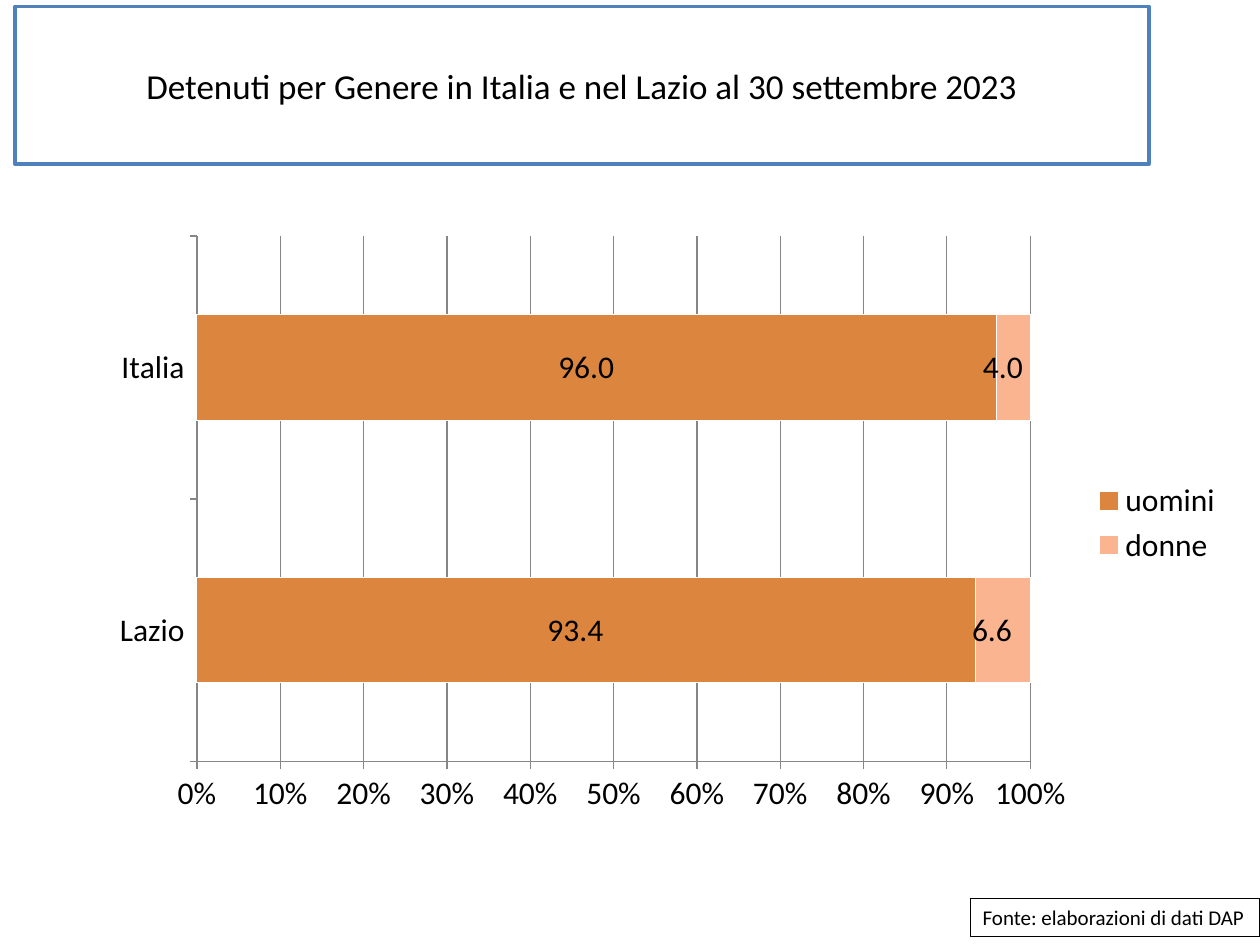
from lxml import etree
from pptx import Presentation
from pptx.chart.data import CategoryChartData
from pptx.dml.color import RGBColor
from pptx.enum import chart as chart_enum, shapes, text
from pptx.oxml import ns
from pptx.util import Cm, Pt

TITLE = "Detenuti per Genere in Italia e nel Lazio al 30 settembre 2023"
SOURCE = "Fonte: elaborazioni di dati DAP"
CATEGORIES = ["Lazio", "Italia"]
BLACK = RGBColor(0x00, 0x00, 0x00)
WHITE = RGBColor(0xFF, 0xFF, 0xFF)
BLUE = RGBColor(0x4F, 0x81, 0xBD)
GRAY = RGBColor(0x86, 0x86, 0x86)
ORANGE = RGBColor(0xDC, 0x85, 0x3E)
PEACH = RGBColor(0xFA, 0xB4, 0x90)
SERIES = [("uomini", [93.4, 96.0], ORANGE), ("donne", [6.6, 4.0], PEACH)]
FONT = "Calibri"
LABEL_FORMAT = r'_-* #,##0.0\ _€_-;\-* #,##0.0\ _€_-;_-* "-"??\ _€_-;_-@_-'
PLOT_AREA = {"x": 0.09, "y": 0.02, "w": 0.73, "h": 0.88}


def format_font(font, size):
    font.name, font.size, font.bold = FONT, Pt(size), False
    font.color.rgb = BLACK


def write_box(shape, content, size, line_color, line_width, align, wrap=True):
    shape.fill.solid()
    shape.fill.fore_color.rgb = WHITE
    shape.line.color.rgb = line_color
    shape.line.width = Pt(line_width)
    frame = shape.text_frame
    frame.word_wrap = wrap
    frame.vertical_anchor = text.MSO_ANCHOR.MIDDLE
    paragraph = frame.paragraphs[0]
    paragraph.alignment = align
    run = paragraph.add_run()
    run.text = content
    format_font(run.font, size)


def set_plot_layout(chart):
    """Fix the inner plot area as fractions of the chart's size."""
    plot_area = chart.plots[0]._element.getparent()
    for old in plot_area.findall(ns.qn("c:layout")):
        plot_area.remove(old)
    layout = etree.Element(ns.qn("c:layout"))
    manual = etree.SubElement(layout, ns.qn("c:manualLayout"))
    settings = {"layoutTarget": "inner", "xMode": "edge", "yMode": "edge", **PLOT_AREA}
    for name, value in settings.items():
        etree.SubElement(manual, ns.qn(f"c:{name}")).set("val", str(value))
    plot_area.insert(0, layout)


def add_gender_chart(slide):
    data = CategoryChartData()
    data.categories = CATEGORIES
    for name, values, _ in SERIES:
        data.add_series(name, values)
    chart = slide.shapes.add_chart(
        chart_enum.XL_CHART_TYPE.BAR_STACKED_100,
        Cm(1.9), Cm(4.52), Cm(23.01), Cm(12.04), data).chart
    format_font(chart.font, 18)
    chart.has_title = False
    chart.has_legend = True
    chart.legend.position = chart_enum.XL_LEGEND_POSITION.RIGHT
    chart.legend.include_in_layout = False

    plot = chart.plots[0]
    plot.gap_width, plot.overlap = 150, 100
    plot.vary_by_categories = False
    for series, (_, _, color) in zip(plot.series, SERIES):
        series.format.fill.solid()
        series.format.fill.fore_color.rgb = color
        series.format.line.color.rgb = WHITE
        labels = series.data_labels
        labels.show_value = True
        labels.number_format = LABEL_FORMAT
        labels.number_format_is_linked = False
        labels.position = chart_enum.XL_LABEL_POSITION.CENTER
        format_font(labels.font, 18)

    value_axis = chart.value_axis
    value_axis.minimum_scale, value_axis.maximum_scale = 0, 1
    value_axis.major_unit = 0.1
    value_axis.has_major_gridlines = True
    value_axis.major_gridlines.format.line.color.rgb = GRAY
    value_axis.tick_labels.number_format = "0%"
    value_axis.tick_labels.number_format_is_linked = False
    for axis in (chart.category_axis, value_axis):
        axis.major_tick_mark = chart_enum.XL_TICK_MARK.OUTSIDE
        axis.format.line.color.rgb = GRAY
    set_plot_layout(chart)


def main():
    presentation = Presentation()
    presentation.slide_width, presentation.slide_height = Cm(25.4), Cm(19.05)
    slide = presentation.slides.add_slide(presentation.slide_layouts[5])

    title = slide.shapes.title
    title.left, title.top, title.width, title.height = Cm(0.3), Cm(0.13), Cm(22.86), Cm(3.18)
    write_box(title, TITLE, 20, BLUE, 2, text.PP_ALIGN.CENTER)

    source = slide.shapes.add_shape(
        shapes.MSO_SHAPE.RECTANGLE, Cm(19.56), Cm(18.11), Cm(5.84), Cm(0.77))
    source.shadow.inherit = False
    write_box(source, SOURCE, 12, BLACK, 0.75, text.PP_ALIGN.LEFT, wrap=False)

    add_gender_chart(slide)
    presentation.save("out.pptx")


if __name__ == "__main__":
    main()
